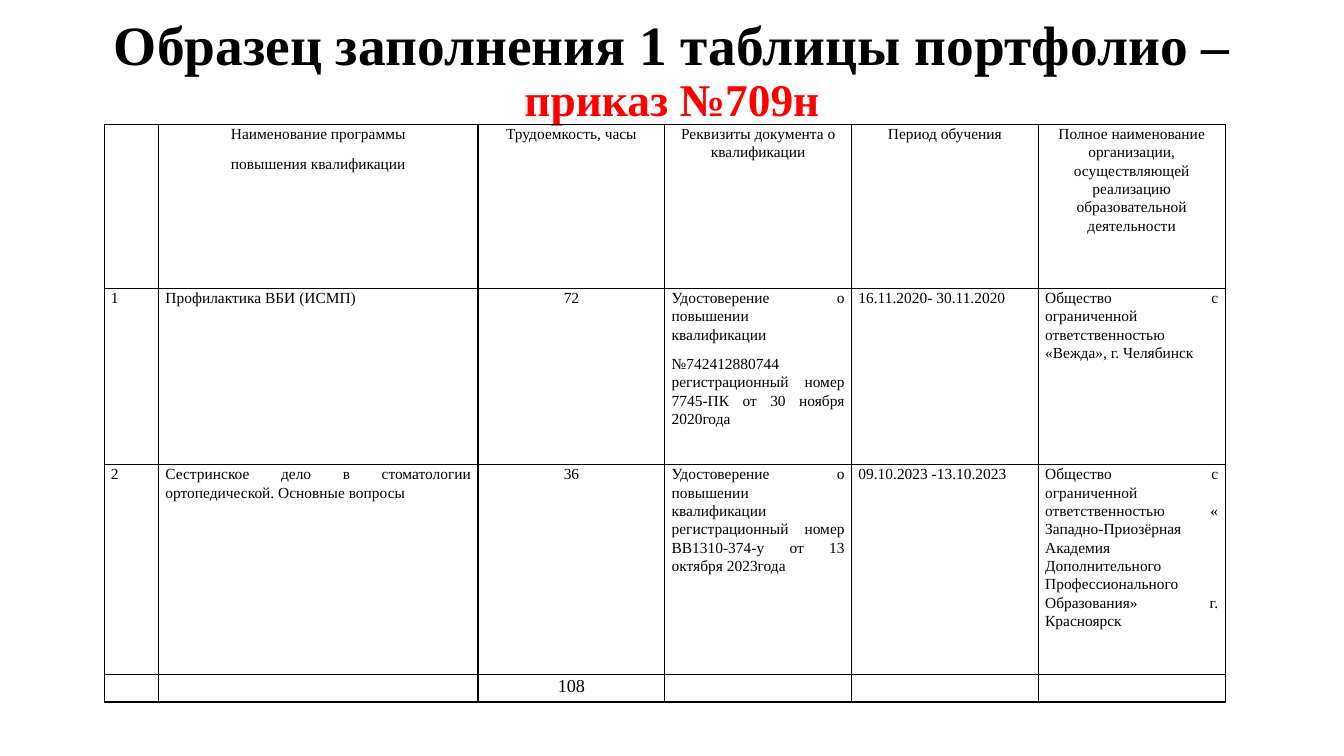
from lxml.etree import SubElement
from pptx import Presentation
from pptx.dml.color import RGBColor
from pptx.enum.text import MSO_ANCHOR, PP_ALIGN
from pptx.oxml.ns import qn
from pptx.util import Pt

BLACK = RGBColor(0, 0, 0)
RED = RGBColor(255, 0, 0)
MID = PP_ALIGN.CENTER
FULL = PP_ALIGN.JUSTIFY

WIDTHS = [38.9, 228.2] + [133.4] * 4
HEIGHTS = [117, 126, 150, 19.5]
ROWS = [
    [
        "",
        "Наименование программы\nповышения квалификации",
        "Трудоемкость, часы",
        "Реквизиты документа о квалификации",
        "Период обучения",
        "Полное наименование организации, осуществляющей реализацию образовательной деятельности",
    ],
    [
        "1",
        "Профилактика ВБИ (ИСМП)",
        "72",
        "Удостоверение о повышении квалификации\n"
        "№742412880744 регистрационный номер 7745-ПК от 30 ноября 2020года",
        "16.11.2020- 30.11.2020",
        "Общество с ограниченной ответственностью «Вежда», г. Челябинск",
    ],
    [
        "2",
        "Сестринское дело в стоматологии ортопедической. Основные вопросы",
        "36",
        "Удостоверение о повышении квалификации регистрационный номер "
        "ВВ1310-374-у от 13 октября 2023года",
        "09.10.2023 -13.10.2023",
        "Общество с ограниченной ответственностью « Западно-Приозёрная Академия "
        "Дополнительного Профессионального Образования» г. Красноярск",
    ],
    ["", "", "108", "", "", ""],
]


class Page:
    face = "Times New Roman"
    small = 11
    total = 13
    pad = 4.9

    def __init__(self, deck):
        self.slide = deck.slides.add_slide(deck.slide_layouts[6])

    def label(self, para, text, size, color=BLACK, bold=False):
        run = para.add_run()
        run.text = text
        font = run.font
        font.name = self.face
        font.size = Pt(size)
        font.bold = bold
        font.color.rgb = color

    def title(self, box, parts):
        frame = self.slide.shapes.add_textbox(*map(Pt, box)).text_frame
        frame.word_wrap = True
        frame.vertical_anchor = MSO_ANCHOR.MIDDLE
        para = frame.paragraphs[0]
        para.alignment = MID
        para.line_spacing = 0.9
        for text, size, color in parts:
            self.label(para, text, size, color, True)

    def border(self, cell):
        props = cell._tc.get_or_add_tcPr()
        for side in ("a:lnL", "a:lnR", "a:lnT", "a:lnB"):
            line = SubElement(props, qn(side), w=str(Pt(1)))
            fill = SubElement(line, qn("a:solidFill"))
            SubElement(fill, qn("a:srgbClr"), val=str(BLACK))

    def cell(self, cell, text, size, align):
        self.border(cell)
        cell.fill.background()
        cell.margin_left = cell.margin_right = Pt(self.pad)
        cell.margin_top = cell.margin_bottom = 0
        frame = cell.text_frame
        for num, part in enumerate(text.split("\n")):
            para = frame.add_paragraph() if num else frame.paragraphs[0]
            para.alignment = align
            para.line_spacing = 1.07
            para.space_after = Pt(8)
            if part:
                self.label(para, part, size)
            else:
                SubElement(para._p, qn("a:endParaRPr"), sz=str(size * 100))

    def table(self, left, top, widths, heights, rows):
        frame = self.slide.shapes.add_table(
            len(rows), len(widths), Pt(left), Pt(top),
            Pt(sum(widths)), Pt(sum(heights)),
        )
        grid = frame.table
        grid.first_row = grid.horz_banding = False
        for col, width in zip(grid.columns, widths):
            col.width = Pt(width)
        for r, (row, height) in enumerate(zip(rows, heights)):
            grid.rows[r].height = Pt(height)
            size = self.total if r == len(rows) - 1 else self.small
            for c, text in enumerate(row):
                align = MID if r == 0 or c == 2 else FULL
                self.cell(grid.cell(r, c), text, size, align)


def main():
    deck = Presentation()
    deck.slide_width = Pt(960)
    deck.slide_height = Pt(540)
    page = Page(deck)
    page.title((66, 7.2, 828, 88), [
        ("Образец заполнения 1 таблицы портфолио – ", 39.6, BLACK),
        ("приказ №709н", 32.4, RED),
    ])
    page.table(74.4, 89, WIDTHS, HEIGHTS, ROWS)
    deck.save("out.pptx")


if __name__ == "__main__":
    main()
